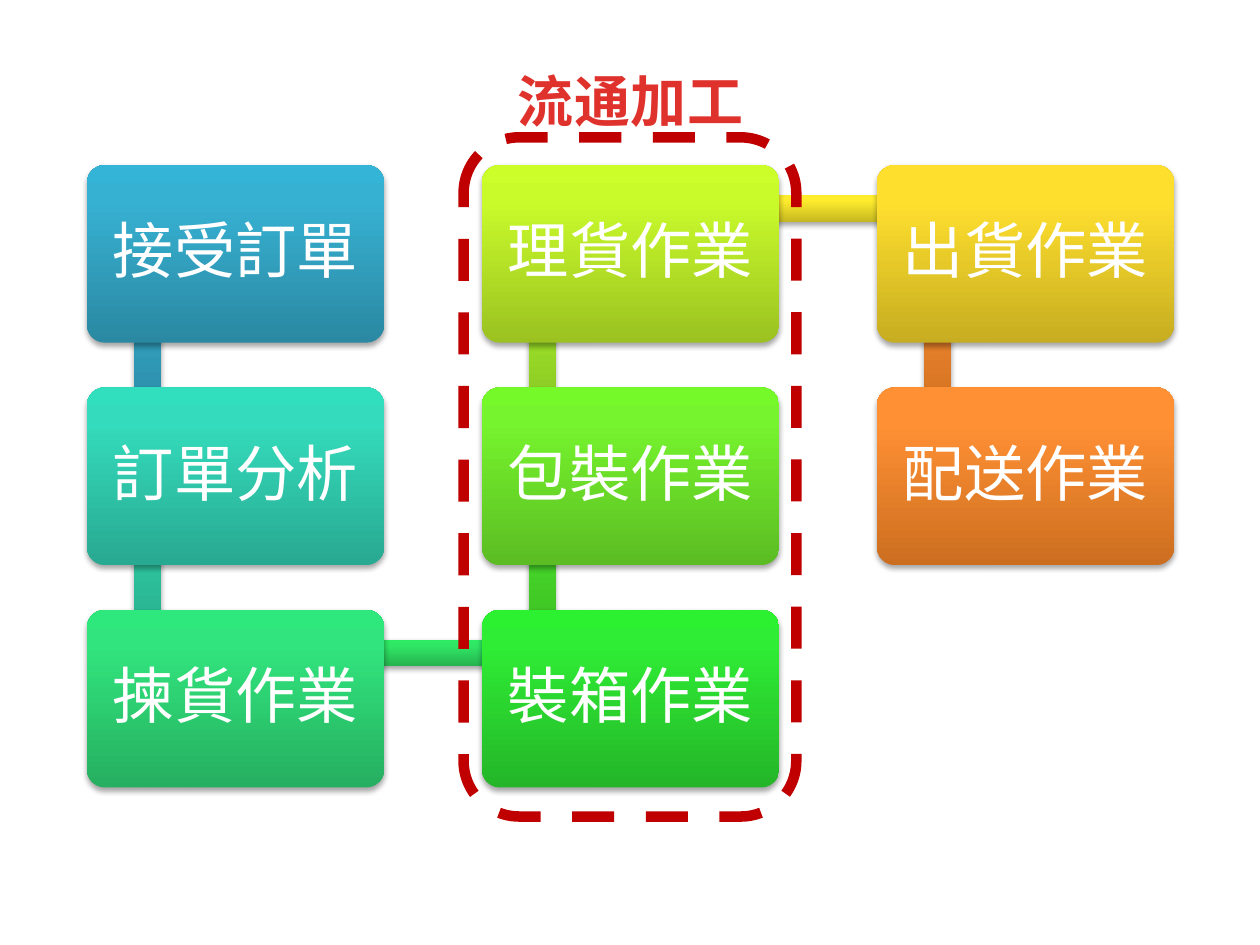
from dataclasses import dataclass
from itertools import pairwise
from math import atan2, degrees, hypot

from lxml import etree
from pptx import Presentation
from pptx.dml.color import RGBColor
from pptx.enum.dml import MSO_LINE
from pptx.enum.shapes import MSO_SHAPE
from pptx.enum.text import MSO_ANCHOR, MSO_AUTO_SIZE, PP_ALIGN
from pptx.oxml import parse_xml
from pptx.oxml.ns import nsdecls
from pptx.util import Inches, Pt

RECT = MSO_SHAPE.RECTANGLE
ROUND = MSO_SHAPE.ROUNDED_RECTANGLE
DASH = MSO_LINE.DASH
MIDDLE = MSO_ANCHOR.MIDDLE
CENTER = PP_ALIGN.CENTER
FIT = MSO_AUTO_SIZE.SHAPE_TO_FIT_TEXT


@dataclass(frozen=True)
class Theme:
    font: str = "Roboto Slab"
    white: str = "FFFFFF"
    frame: str = "C00000"
    label: str = "E0322D"
    step_size: int = 35
    label_size: int = 32


@dataclass(frozen=True)
class Step:
    text: str
    col: int
    row: int
    fill: str
    link: str = ""

    @property
    def left(self) -> float:
        return 0.69 + 3.135 * self.col

    @property
    def top(self) -> float:
        return 1.31 + 1.765 * self.row


THEME = Theme()
BOX_W, BOX_H = 2.36, 1.41
LINK_H = 0.21
JOINT_X, JOINT_Y = 0.48, 0.345

# Fills run from bottom to top; each link leads on to the next step.
STEPS = [
    Step("接受訂單", 0, 0, "2A88A2 37B1D2 34B4D6", "2A88A2 37B1D2 34B4D6"),
    Step("訂單分析", 0, 1, "28A991 34DBBC 31DFBF", "27AA89 33DCB2 30E1B5"),
    Step("揀貨作業", 0, 2, "26AF60 31E47D 2EE87D", "25B24E 30E765 2DEB64"),
    Step("裝箱作業", 1, 2, "24B628 2FEC34 2BF131", "3CB923 4EF02E 4CF52A"),
    Step("包裝作業", 1, 1, "5BBC23 76F42D 75F929", "85C022 ADF92C AFFE28"),
    Step("理貨作業", 1, 0, "9BC221 C9FB2B CCFF29", "C6B821 FFEC2D FFED2E"),
    Step("出貨作業", 2, 0, "C7AD21 FFDF2E FFDF2F", "CC6E20 FF9034 FF9136"),
    Step("配送作業", 2, 1, "CC6E20 FF9034 FF9136"),
]


def add_shape(slide, kind, left: float, top: float, width: float, height: float):
    return slide.shapes.add_shape(
        kind, Inches(left), Inches(top), Inches(width), Inches(height))


def paint(shape, colors: str) -> None:
    """Give the shape an upright three-stop gradient and a soft shadow."""
    shape.line.fill.background()
    stops = "".join(
        f'<a:gs pos="{pos}"><a:srgbClr val="{color}"/></a:gs>'
        for pos, color in zip((0, 80000, 100000), colors.split()))
    grad = parse_xml(
        f'<a:gradFill {nsdecls("a")} rotWithShape="0"><a:gsLst>{stops}</a:gsLst>'
        '<a:lin ang="16200000" scaled="0"/></a:gradFill>')
    props = shape._element.spPr
    props.insert(props.index(props.prstGeom) + 1, grad)
    shape.shadow.inherit = False
    effects = props.find(f"{{{props.nsmap['a']}}}effectLst")
    etree.SubElement(effects, "void")
    effects.replace(effects[0], parse_xml(
        f'<a:outerShdw {nsdecls("a")} blurRad="{Pt(3.1)}" dist="{Pt(1.8)}" '
        'dir="5400000" rotWithShape="0"><a:srgbClr val="000000">'
        '<a:alpha val="35000"/></a:srgbClr></a:outerShdw>'))


def write(shape, text: str, size: int, color: str, bold: bool = False):
    """Set one centred line of text and return its run."""
    para = shape.text_frame.paragraphs[0]
    para.text = text
    para.alignment = CENTER
    run = para.runs[0]
    run.font.name = THEME.font
    run.font.size = Pt(size)
    run.font.bold = bold
    run.font.color.rgb = RGBColor.from_string(color)
    return run


def add_link(slide, start: Step, end: Step) -> None:
    dx, dy = end.left - start.left, end.top - start.top
    span = hypot(dx, dy)
    mid_x = start.left + JOINT_X + dx / 2
    mid_y = start.top + JOINT_Y + dy / 2
    bar = add_shape(slide, RECT, mid_x - span / 2, mid_y - LINK_H / 2, span, LINK_H)
    bar.rotation = degrees(atan2(dy, dx)) % 360
    paint(bar, start.link)


def add_step(slide, step: Step) -> None:
    box = add_shape(slide, ROUND, step.left, step.top, BOX_W, BOX_H)
    box.adjustments[0] = 0.1
    paint(box, step.fill)
    frame = box.text_frame
    frame.word_wrap = True
    frame.vertical_anchor = MIDDLE
    frame.margin_left = frame.margin_right = Inches(0.15)
    frame.margin_top = frame.margin_bottom = Inches(0.15)
    write(box, step.text, THEME.step_size, THEME.white)
    frame.paragraphs[0].line_spacing = 0.9


def add_group(slide) -> None:
    """Frame the middle column and label it."""
    frame = add_shape(slide, ROUND, 3.68, 1.09, 2.64, 5.39)
    frame.shadow.inherit = False
    frame.fill.background()
    frame.line.color.rgb = RGBColor.from_string(THEME.frame)
    frame.line.width = Pt(6)
    frame.line.dash_style = DASH

    label = slide.shapes.add_textbox(
        Inches(4), Inches(0.48), Inches(2.01), Inches(0.64))
    label.text_frame.word_wrap = True
    label.text_frame.auto_size = FIT
    run = write(label, "流通加工", THEME.label_size, THEME.label, bold=True)
    run._r.get_or_add_rPr().set("spc", "50")


def main() -> None:
    deck = Presentation()
    deck.slide_width, deck.slide_height = Inches(10), Inches(7.5)
    slide = deck.slides.add_slide(deck.slide_layouts[6])
    for start, end in pairwise(STEPS):
        add_link(slide, start, end)
    for step in STEPS:
        add_step(slide, step)
    add_group(slide)
    deck.save("out.pptx")


if __name__ == "__main__":
    main()
